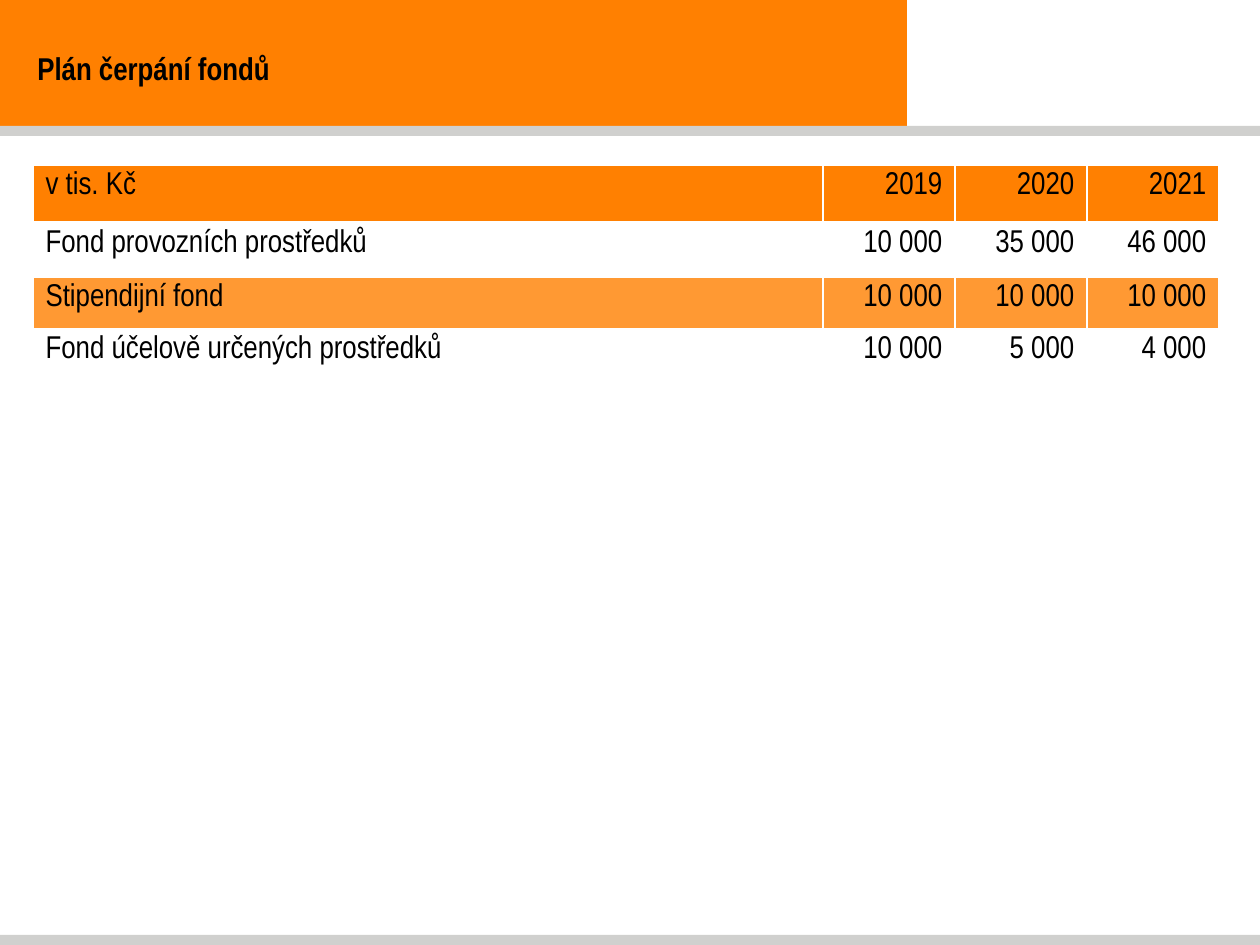
from lxml import etree
from pptx import Presentation
from pptx.dml.color import RGBColor
from pptx.enum.shapes import MSO_SHAPE
from pptx.enum.text import MSO_ANCHOR, PP_ALIGN
from pptx.oxml.ns import qn
from pptx.util import Pt

RECT = MSO_SHAPE.RECTANGLE
MIDDLE = MSO_ANCHOR.MIDDLE
LEFT, RIGHT, JUSTIFY = PP_ALIGN.LEFT, PP_ALIGN.RIGHT, PP_ALIGN.JUSTIFY

SCALE = 914400 / 126
FONT = "Arial Narrow"
HUES = {"orange": "FF8001", "band": "FF9933", "gray": "D0D0CE",
        "white": "FFFFFF", "black": "000000"}

TITLE = "Plán čerpání fondů"
FUNDS = [
    ["v tis. Kč", "2019", "2020", "2021"],
    ["Fond provozních prostředků", "10 000", "35 000", "46 000"],
    ["Stipendijní fond", "10 000", "10 000", "10 000"],
    ["Fond účelově určených prostředků", "10 000", "5 000", "4 000"],
]
ROW_HUES = ["orange", "white", "band", "white"]
ROW_SIZES = [58, 54, 52, 57]
COL_SIZES = [790, 132, 132, 132]


def px(size):
    return round(size * SCALE)


def paint(part, hue):
    part.fill.solid()
    part.fill.fore_color.rgb = RGBColor.from_string(HUES[hue])


def write(frame, text, align, bold=False):
    para = frame.paragraphs[0]
    para.alignment = align
    run = para.add_run()
    run.text = text
    run.font.name = FONT
    run.font.size = Pt(18)
    run.font.bold = bold
    run.font.color.rgb = RGBColor.from_string(HUES["black"])
    return para


def add_bar(slide, x, y, w, h, hue):
    bar = slide.shapes.add_shape(RECT, px(x), px(y), px(w), px(h))
    bar.shadow.inherit = False
    paint(bar, hue)
    bar.line.fill.background()


def add_header(slide, x, y, w, h):
    # Orange block with the title across it
    add_bar(slide, x, y, w, h, "orange")
    box = slide.shapes.add_textbox(px(x), px(y + 39), px(w), px(57))
    frame = box.text_frame
    frame.word_wrap = True
    frame.vertical_anchor = MIDDLE
    para = write(frame, TITLE, JUSTIFY, True)
    para._p.get_or_add_pPr().set("marL", str(px(25)))


def add_edges(cell, base):
    # Border lines come ahead of the fill in the cell properties
    props = cell._tc.get_or_add_tcPr()
    edges = [("lnL", 1), ("lnR", 1), ("lnT", 1), ("lnB", base)]
    for spot, (tag, width) in enumerate(edges):
        line = etree.Element(qn("a:" + tag), w=str(Pt(width)))
        fill = etree.SubElement(line, qn("a:solidFill"))
        etree.SubElement(fill, qn("a:srgbClr"), val=HUES["white"])
        props.insert(spot, line)


def add_funds(slide, x, y):
    shape = slide.shapes.add_table(
        len(FUNDS), len(COL_SIZES), px(x), px(y),
        px(sum(COL_SIZES)), px(sum(ROW_SIZES)))
    table = shape.table
    for col, size in zip(table.columns, COL_SIZES):
        col.width = px(size)
    for r, texts in enumerate(FUNDS):
        table.rows[r].height = px(ROW_SIZES[r])
        for c, text in enumerate(texts):
            cell = table.cell(r, c)
            paint(cell, ROW_HUES[r])
            add_edges(cell, 1 if r else 3)
            write(cell.text_frame, text, RIGHT if c else LEFT)


def main():
    deck = Presentation()
    deck.slide_width, deck.slide_height = px(1260), px(945)
    slide = deck.slides.add_slide(deck.slide_layouts[6])
    # Frame: header block and the two gray rules
    add_header(slide, 0, 0, 907, 126)
    for y in (126, 935):
        add_bar(slide, 0, y, 1260, 10, "gray")
    # Fund table
    add_funds(slide, 33, 165)
    deck.save("out.pptx")


if __name__ == "__main__":
    main()
